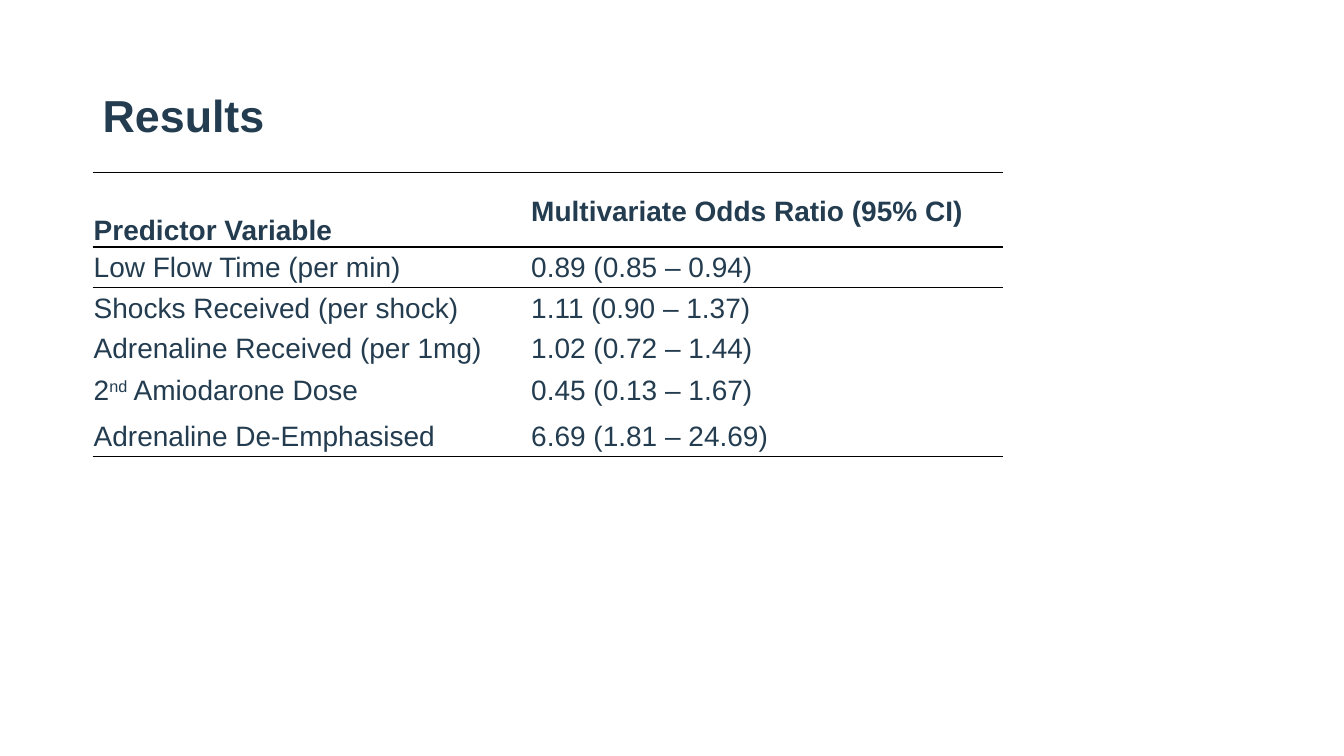
from lxml.etree import SubElement
from pptx import Presentation
from pptx.dml.color import RGBColor
from pptx.enum.text import MSO_ANCHOR as Anchor
from pptx.oxml.ns import qn
from pptx.util import Pt

INK = "233C4F"
RULE = "000000"
COLUMNS = [312.5, 337.7]
HEIGHTS = [53.3, 22.3, 22.3, 30.2, 32.4, 29.5]
RULED = {0: "TB", 1: "TB", 2: "T", 5: "B"}
ROWS = [
    (["Predictor Variable"], ["Multivariate Odds Ratio (95% CI)"]),
    (["Low Flow Time (per min)"], ["0.89 (0.85 – 0.94)"]),
    (["Shocks Received (per shock)"], ["1.11 (0.90 – 1.37)"]),
    (["Adrenaline Received (per 1mg)"], ["1.02 (0.72 – 1.44)"]),
    (["2", "nd", " Amiodarone Dose"], ["0.45 (0.13 – 1.67)"]),
    (["Adrenaline De-Emphasised"], ["6.69 (1.81 – 24.69)"]),
]


def color(code):
    return RGBColor.from_string(code)


def add_span(para, text, size, bold=False, raised=False):
    span = para.add_run()
    span.text = text
    span.font.name = "Arial"
    span.font.size = Pt(size)
    span.font.bold = bold
    span.font.color.rgb = color(INK)
    if raised:
        span.font._element.set("baseline", "30000")


def add_title(page, text):
    box = page.shapes.add_textbox(Pt(66.2), Pt(36), Pt(503.3), Pt(97.2))
    frame = box.text_frame
    frame.word_wrap = True
    frame.vertical_anchor = Anchor.MIDDLE
    para = frame.paragraphs[0]
    para.line_spacing = 0.9
    add_span(para, text, 32, bold=True)


def set_borders(cell, ruled):
    properties = cell._tc.get_or_add_tcPr()
    for side in "LRTB":
        line = SubElement(properties, qn(f"a:ln{side}"), w=str(Pt(1)))
        if side in ruled:
            fill = SubElement(line, qn("a:solidFill"))
            SubElement(fill, qn("a:srgbClr"), val=RULE)
        else:
            SubElement(line, qn("a:noFill"))


def fill_cell(cell, texts, bold, anchor, ruled):
    set_borders(cell, ruled)
    cell.fill.background()
    cell.margin_left = cell.margin_right = Pt(0.75)
    cell.margin_top = cell.margin_bottom = Pt(0.75)
    cell.vertical_anchor = anchor
    para = cell.text_frame.paragraphs[0]
    para.line_spacing = 1.14
    for text in texts:
        add_span(para, text, 20, bold, raised=text == "nd")


def add_results(page):
    frame = page.shapes.add_table(
        len(ROWS), len(COLUMNS), Pt(66.2), Pt(123.1),
        Pt(sum(COLUMNS)), Pt(sum(HEIGHTS)))
    table = frame.table
    table.first_row = table.horz_banding = False
    for column, width in zip(table.columns, COLUMNS):
        column.width = Pt(width)
    for row, height in zip(table.rows, HEIGHTS):
        row.height = Pt(height)
    header_anchors = [Anchor.BOTTOM, Anchor.MIDDLE]
    for r, cells in enumerate(ROWS):
        for c, texts in enumerate(cells):
            anchor = header_anchors[c] if r == 0 else Anchor.TOP
            fill_cell(table.cell(r, c), texts, r == 0, anchor, RULED.get(r, ""))


def main():
    deck = Presentation()
    deck.slide_width, deck.slide_height = Pt(960), Pt(540)
    page = deck.slides.add_slide(deck.slide_layouts[6])
    add_title(page, "Results")
    add_results(page)
    deck.save("out.pptx")


if __name__ == "__main__":
    main()
